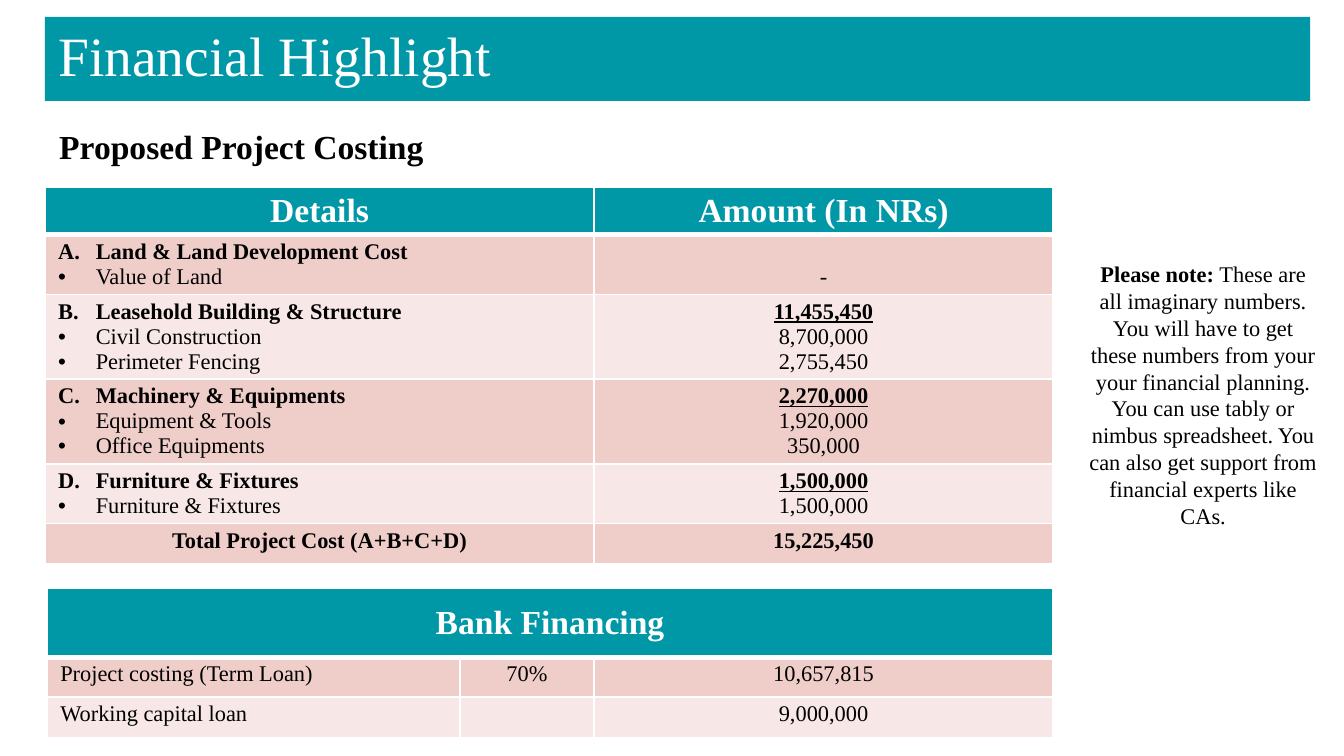
from lxml.etree import SubElement
from pptx import Presentation
from pptx.dml.color import RGBColor
from pptx.enum.text import MSO_ANCHOR as Anchor, MSO_AUTO_SIZE as AutoSize, PP_ALIGN as Align
from pptx.oxml.ns import qn
from pptx.util import Cm, Pt

FONT = "Times New Roman"
TEAL, WHITE, BLACK = "0097A7", "FFFFFF", "000000"
BANDS = ("EFCECA", "F7E8E7")
COSTS = [
    ("Land & Land Development Cost", None, [("Value of Land", "-")]),
    ("Leasehold Building & Structure", "11,455,450",
     [("Civil Construction", "8,700,000"), ("Perimeter Fencing", "2,755,450")]),
    ("Machinery & Equipments", "2,270,000",
     [("Equipment & Tools", "1,920,000"), ("Office Equipments", "350,000")]),
    ("Furniture & Fixtures", "1,500,000", [("Furniture & Fixtures", "1,500,000")]),
]
LOANS = [
    ("Project costing (Term Loan)", "70%", "10,657,815"),
    ("Working capital loan", "", "9,000,000"),
]


def paint(fill, color):
    fill.solid()
    fill.fore_color.rgb = RGBColor.from_string(color)


def add_span(para, text, size=12, color=BLACK, bold=False, underline=None):
    span = para.add_run()
    span.text = text
    font = span.font
    font.name, font.size, font.bold, font.underline = FONT, Pt(size), bold, underline
    font.color.rgb = RGBColor.from_string(color)


def add_para(frame, text, align=Align.LEFT, **style):
    para = frame.paragraphs[0]
    if para.runs:
        para = frame.add_paragraph()
    para.alignment = align
    add_span(para, text, **style)
    return para


def add_bullet(para, number=None):
    props = para._p.get_or_add_pPr()
    props.set("marL", str(Cm(0.71)))
    props.set("indent", str(-Cm(0.71)))
    if number:
        SubElement(props, qn("a:buFont"), typeface="+mj-lt")
        SubElement(props, qn("a:buAutoNum"), type="alphaUcPeriod", startAt=str(number))
    else:
        SubElement(props, qn("a:buFont"), typeface="Arial")
        SubElement(props, qn("a:buChar"), char="•")


def add_borders(cell, top, bottom):
    props = cell._tc.get_or_add_tcPr()
    for side, width in (("L", 1), ("R", 1), ("T", top), ("B", bottom)):
        line = SubElement(props, qn(f"a:ln{side}"), w=str(Pt(width)))
        color = SubElement(line, qn("a:solidFill"))
        SubElement(color, qn("a:srgbClr"), val=WHITE)


def add_grid(page, left, top, widths, heights):
    frame = page.shapes.add_table(len(heights), len(widths), Cm(left), Cm(top),
                                  Cm(sum(widths)), Cm(sum(heights)))
    table = frame.table
    for column, width in zip(table.columns, widths):
        column.width = Cm(width)
    for index, (row, height) in enumerate(zip(table.rows, heights)):
        row.height = Cm(height)
        for cell in row.cells:
            cell.margin_left = cell.margin_right = Cm(0.25)
            cell.margin_top = cell.margin_bottom = Cm(0.09)
            cell.vertical_anchor = Anchor.TOP if index else Anchor.MIDDLE
            add_borders(cell, 3 if index == 1 else 1, 1 if index else 3)
            paint(cell.fill, BANDS[(index - 1) % 2] if index else TEAL)
    return table


def add_heading(cell, text):
    add_para(cell.text_frame, text, Align.CENTER, size=18, color=WHITE, bold=True)


def add_costing(page):
    table = add_grid(page, 0.85, 3.54, (10.38, 8.67), (0.9, 1.13, 1.6, 1.6, 1.13, 0.76))
    for column, text in enumerate(("Details", "Amount (In NRs)")):
        add_heading(table.cell(0, column), text)
    for index, (group, subtotal, items) in enumerate(COSTS, 1):
        details, amounts = table.cell(index, 0), table.cell(index, 1)
        add_bullet(add_para(details.text_frame, group, bold=True), index)
        if subtotal:
            add_para(amounts.text_frame, subtotal, Align.CENTER, bold=True, underline=True)
        else:
            amounts.vertical_anchor = Anchor.BOTTOM
        for name, amount in items:
            add_bullet(add_para(details.text_frame, name))
            add_para(amounts.text_frame, amount, Align.CENTER)
    for column, text in enumerate(("Total Project Cost (A+B+C+D)", "15,225,450")):
        add_para(table.cell(5, column).text_frame, text, Align.CENTER, bold=True)


def add_financing(page):
    table = add_grid(page, 0.89, 11.12, (7.8, 2.54, 8.67), (1.3, 0.76, 0.76))
    table.cell(0, 0).merge(table.cell(0, 2))
    add_heading(table.cell(0, 0), "Bank Financing")
    for index, loan in enumerate(LOANS, 1):
        for column, text in enumerate(loan):
            frame = table.cell(index, column).text_frame
            if text:
                add_para(frame, text, Align.CENTER if column else Align.LEFT)
            else:
                frame.paragraphs[0]._p.get_or_add_endParaRPr().set("sz", "1200")


def add_title(page, text):
    title = page.shapes.title
    title.left, title.top, title.width, title.height = Cm(0.85), Cm(0.32), Cm(23.91), Cm(1.59)
    paint(title.fill, TEAL)
    frame = title.text_frame
    frame.auto_size = AutoSize.NONE
    frame.vertical_anchor = Anchor.BOTTOM
    frame.margin_left = frame.margin_right = frame.margin_bottom = Cm(0.25)
    frame.margin_top = Cm(0.13)
    add_para(frame, text, size=29.7, color=WHITE)


def add_box(page, left, top, width, height, inset):
    frame = page.shapes.add_textbox(Cm(left), Cm(top), Cm(width), Cm(height)).text_frame
    frame.word_wrap = True
    frame.margin_left = frame.margin_right = Cm(0.25)
    frame.margin_top = frame.margin_bottom = Cm(inset)
    return frame


def main():
    deck = Presentation()
    deck.slide_width, deck.slide_height = Cm(25.4), Cm(14.29)
    page = deck.slides.add_slide(deck.slide_layouts[5])
    add_title(page, "Financial Highlight")
    add_costing(page)
    subtitle = add_box(page, 0.87, 2.25, 22.66, 1.02, 0.13)
    add_para(subtitle, "Proposed Project Costing", size=18, bold=True)
    add_financing(page)
    note = add_box(page, 20.3, 4.67, 4.88, 6.68, 0.25)
    para = add_para(note, "Please note:", Align.CENTER, bold=True)
    add_span(para, " These are all imaginary numbers. You will have to get these numbers "
                   "from your your financial planning. You can use tably or "
                   "nimbus spreadsheet. You can also get support from financial "
                   "experts like CAs.")
    deck.save("out.pptx")


if __name__ == "__main__":
    main()
